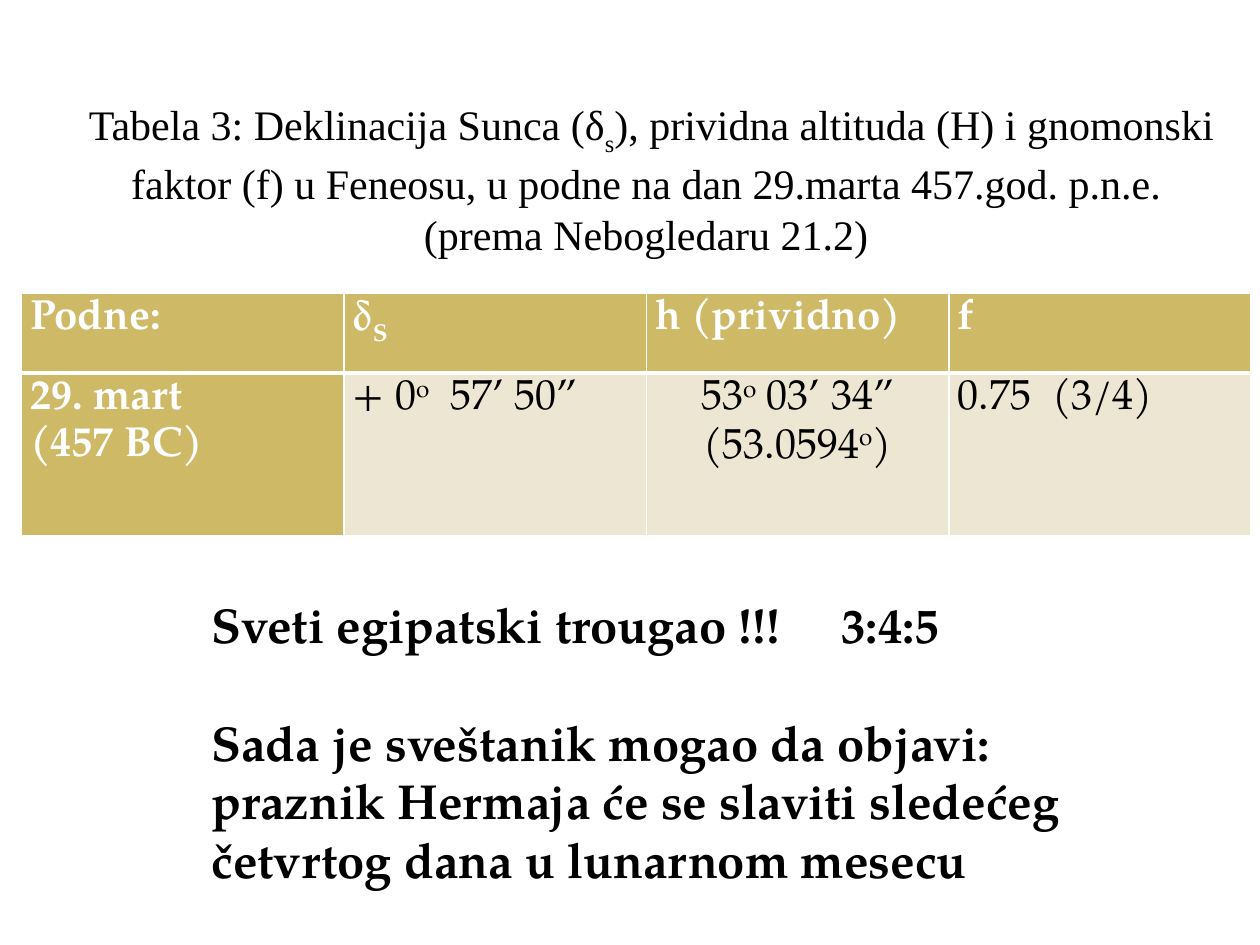
from lxml import etree
from pptx import Presentation
from pptx.dml.color import RGBColor
from pptx.enum.text import MSO_ANCHOR, MSO_AUTO_SIZE, PP_ALIGN
from pptx.oxml.ns import qn
from pptx.util import Inches, Pt

LEFT, CENTER = PP_ALIGN.LEFT, PP_ALIGN.CENTER
TOP, MIDDLE = MSO_ANCHOR.TOP, MSO_ANCHOR.MIDDLE
GROW = MSO_AUTO_SIZE.SHAPE_TO_FIT_TEXT

SERIF, PAGELLA = "Times New Roman", "TeX Gyre Pagella"
BLACK, WHITE, GOLD, CREAM = "000000", "FFFFFF", "CEB966", "EDE6D3"

DEGREE = ("o", 30)
TITLE = [
    "Tabela 3: Deklinacija Sunca (δ", ("s", -30),
    "), prividna altituda (H) i gnomonski faktor (f) u Feneosu, "
    "u podne na dan 29.marta 457.god. p.n.e. ",
    "\n", "(prema Nebogledaru 21.2) ",
]
TABLE = [
    [[["Podne:"]], [["δ", ("S", -25)]], [["h (prividno)"]], [["f"]]],
    [
        [["29. mart"], ["(457 BC)"]],
        [["+ 0", DEGREE, "  57’ 50”"]],
        [["53", DEGREE, " 03’ 34”"], ["(53.0594", DEGREE, ")"]],
        [["0.75  (3/4)"]],
    ],
]
MESSAGE = [
    ["Sveti egipatski trougao !!!\t3:4:5"],
    ["Sada je sveštanik mogao da objavi: praznik Hermaja će se slaviti "
     "sledećeg četvrtog dana u lunarnom mesecu"],
]


def rgb(color):
    """Turn a hex string into a colour."""
    return RGBColor.from_string(color)


def write_paragraph(p, parts, font, size, color, bold=False, align=LEFT):
    """Write plain, raised or lowered runs and line breaks into a paragraph."""
    p.alignment = align
    p.font.name, p.font.size, p.font.bold = font, Pt(size), bold
    p.font.color.rgb = rgb(color)
    for part in parts:
        if part == "\n":
            p.add_line_break()
            continue
        text, shift = part if isinstance(part, tuple) else (part, 0)
        r = p.add_run()
        r.text = text
        if shift:
            r.font._element.set("baseline", str(shift * 1000))


def write_paragraphs(tf, lines, **style):
    """Fill a text frame with one paragraph per line."""
    for i, parts in enumerate(lines):
        p = tf.add_paragraph() if i else tf.paragraphs[0]
        write_paragraph(p, parts, **style)


def add_text(s, box, lines, anchor=TOP, **style):
    """Add a wrapping text box and return its text frame."""
    tf = s.shapes.add_textbox(*map(Inches, box)).text_frame
    tf.word_wrap, tf.auto_size, tf.vertical_anchor = True, GROW, anchor
    write_paragraphs(tf, lines, **style)
    return tf


def add_tab_stop(p, position):
    """Give a paragraph a left tab stop."""
    pPr = p._p.get_or_add_pPr()
    tabs = etree.Element(qn("a:tabLst"))
    etree.SubElement(tabs, qn("a:tab"), pos=str(Inches(position)), algn="l")
    pPr.find(qn("a:defRPr")).addprevious(tabs)


def set_borders(cell, color, **widths):
    """Draw the cell borders with the widths given by side."""
    tcPr = cell._tc.get_or_add_tcPr()
    for side in "LRTB":
        ln = etree.SubElement(tcPr, qn(f"a:ln{side}"), w=str(Pt(widths.get(side, 1))))
        fill = etree.SubElement(ln, qn("a:solidFill"))
        etree.SubElement(fill, qn("a:srgbClr"), val=color)


def style_cell(cell, lines, heading, align, fill, **widths):
    """Fill one table cell with its text, borders and colour."""
    cell.margin_left = cell.margin_right = Inches(0.07)
    cell.margin_top = cell.margin_bottom = 0
    write_paragraphs(cell.text_frame, lines, font=PAGELLA, size=24,
                     color=WHITE if heading else BLACK, bold=heading, align=align)
    for p in cell.text_frame.paragraphs:
        p.line_spacing = 1.15
    set_borders(cell, WHITE, **widths)
    cell.fill.solid()
    cell.fill.fore_color.rgb = rgb(fill)


def add_noon_table(s, box, widths, heights):
    """Add the table with a heading row and a heading column."""
    table = s.shapes.add_table(len(heights), len(widths), *map(Inches, box)).table
    table.horz_banding = False
    for column, width in zip(table.columns, widths):
        column.width = Inches(width)
    for i, height in enumerate(heights):
        table.rows[i].height = Inches(height)
        rule = {"T": 3} if i else {"B": 3}
        for j, lines in enumerate(TABLE[i]):
            heading = i == 0 or j == 0
            align = CENTER if len(lines) > 1 and not heading else LEFT
            style_cell(table.cell(i, j), lines, heading, align,
                       GOLD if heading else CREAM, **rule)


def main():
    """Build the slide and save it."""
    prs = Presentation()
    prs.slide_width, prs.slide_height = Inches(10), Inches(7.5)
    s = prs.slides.add_slide(prs.slide_layouts[6])
    add_noon_table(s, (0.17, 2.33, 9.75, 1.92), (2.56, 2.4, 2.4, 2.4), (0.63, 1.29))
    add_text(s, (0.42, 0.76, 9.5, 1.31), [TITLE], anchor=MIDDLE,
             font=SERIF, size=24, color=BLACK, align=CENTER)
    tf = add_text(s, (1.58, 4.67, 7.67, 2.46), MESSAGE,
                  font=PAGELLA, size=28, color=BLACK, bold=True)
    add_tab_stop(tf.paragraphs[0], 5)
    tf.paragraphs[1].space_before = Pt(33.5)
    prs.save("out.pptx")


if __name__ == "__main__":
    main()
